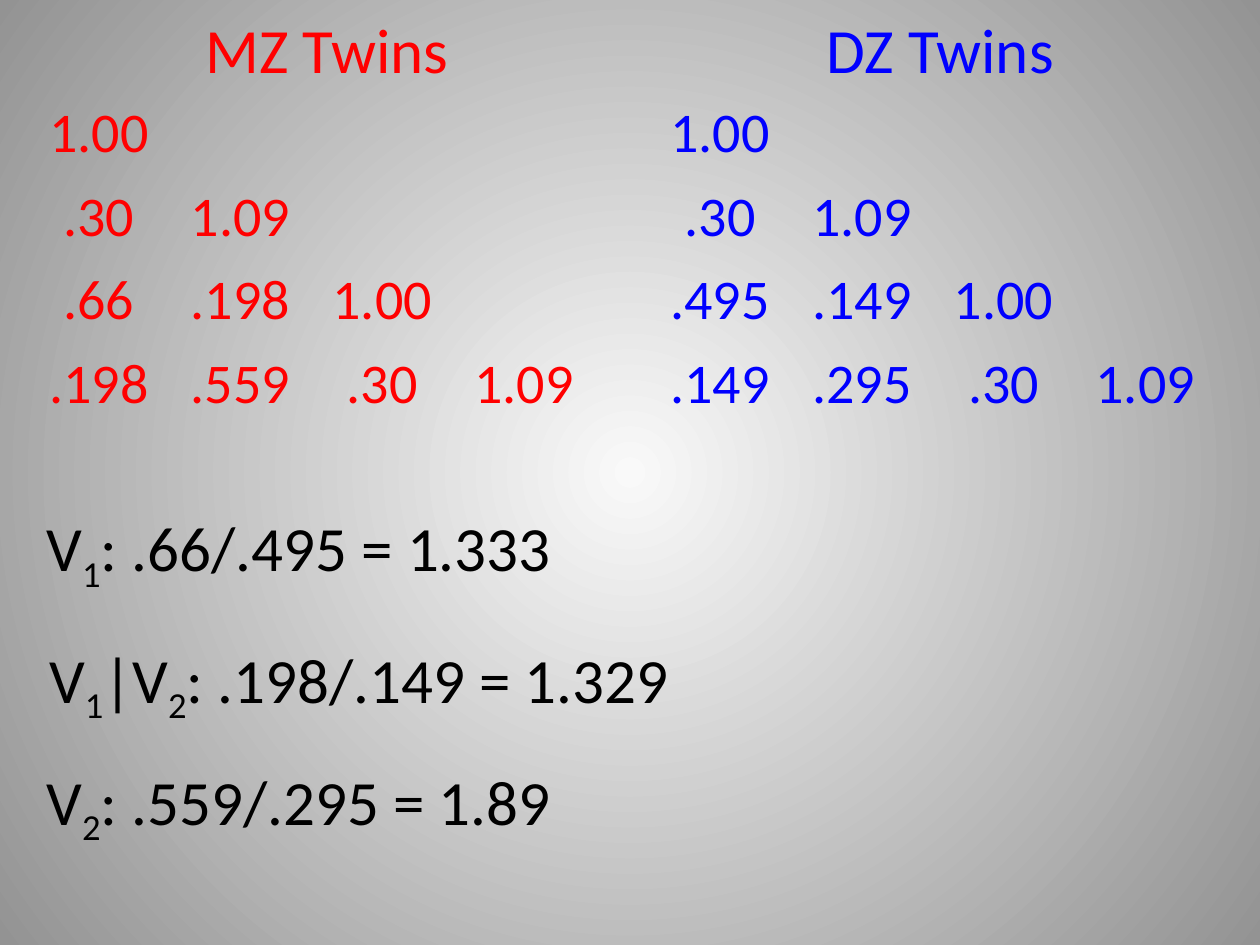
from dataclasses import dataclass

from lxml import etree
from pptx import Presentation
from pptx.dml.color import RGBColor
from pptx.enum.dml import MSO_THEME_COLOR
from pptx.enum.text import MSO_AUTO_SIZE, PP_ALIGN
from pptx.oxml.ns import qn
from pptx.util import Pt

CENTER = PP_ALIGN.CENTER
GROW = MSO_AUTO_SIZE.SHAPE_TO_FIT_TEXT
ACCENT = MSO_THEME_COLOR.ACCENT_1
NO_STYLE_NO_GRID = "{2D5ABB26-0587-4C30-8999-92F81FD0307C}"
BLANK_LAYOUT = 6


@dataclass(frozen=True)
class Theme:
    font: str = "Calibri"
    mz: RGBColor = RGBColor(0xFF, 0x00, 0x00)
    dz: RGBColor = RGBColor(0x00, 0x00, 0xFF)
    ink: RGBColor = RGBColor(0x00, 0x00, 0x00)
    glow: RGBColor = RGBColor(0xF9, 0xF9, 0xF9)
    edge: RGBColor = RGBColor(0x93, 0x93, 0x93)
    heading: int = 36
    matrix: int = 32


THEME = Theme()

# Lower triangles of the covariance matrices
MZ_ROWS = [["1.00"], [".30", "1.09"], [".66", ".198", "1.00"],
           [".198", ".559", ".30", "1.09"]]
DZ_ROWS = [["1.00"], [".30", "1.09"], [".495", ".149", "1.00"],
           [".149", ".295", ".30", "1.09"]]

# Ratio lines: left, top, width, then text pieces that alternate normal, subscript
RATIOS = [
    (19.5, 287.3, 307.5, ["V", "1", ": .66/.495 = 1.333"]),
    (21, 362.2, 375, ["V", "1", "|V", "2", ": .198/.149 = 1.329"]),
    (19.5, 432, 307.5, ["V", "2", ": .559/.295 = 1.89"]),
]


def add_run(paragraph, text, size, color):
    run = paragraph.add_run()
    run.text = text
    for attribute, value in {"name": THEME.font, "size": Pt(size)}.items():
        setattr(run.font, attribute, value)
    run.font.color.rgb = color
    return run


def add_line(slide, left, top, width, pieces, color):
    """One line of large text; every second piece is a subscript."""
    box = slide.shapes.add_textbox(Pt(left), Pt(top), Pt(width), Pt(51))
    frame = box.text_frame
    for attribute, value in {"word_wrap": False, "auto_size": GROW}.items():
        setattr(frame, attribute, value)
    for index, piece in enumerate(pieces):
        run = add_run(frame.paragraphs[0], piece, THEME.heading, color)
        if index % 2:
            run.font._element.set("baseline", "-25000")


def paint_background(slide):
    """Radial gradient, light in the middle and grey at the edges."""
    fill = slide.background.fill
    fill.gradient()
    for stop, color, position in zip(fill.gradient_stops,
                                     (THEME.glow, THEME.edge), (0, 1)):
        stop.color.theme_color = ACCENT  # drops the preset tints
        stop.color.rgb = color
        stop.position = position
    gradient = slide.background._cSld.find(".//" + qn("a:gradFill"))
    linear = gradient.find(qn("a:lin"))
    circle = etree.Element(qn("a:path"), {"path": "circle"})
    etree.SubElement(circle, qn("a:fillToRect"),
                     dict.fromkeys("ltrb", "50000"))
    gradient.replace(linear, circle)


def add_twin_panel(slide, left, top, width, height, title, title_width, rows, color):
    """Heading above a triangular matrix."""
    heading_height = 51
    add_line(slide, left + 94.3, top, title_width, [title], color)

    count = len(rows)
    matrix_height = height - heading_height
    matrix = slide.shapes.add_table(count, count, Pt(left), Pt(top + heading_height),
                                    Pt(width), Pt(matrix_height)).table
    for attribute in ("first_row", "horz_banding"):
        setattr(matrix, attribute, False)
    matrix._tbl.tblPr.find(qn("a:tableStyleId")).text = NO_STYLE_NO_GRID
    for column in matrix.columns:
        column.width = Pt(width / count)
    for row in matrix.rows:
        row.height = Pt(matrix_height / count)
    for cell in matrix.iter_cells():
        cell.fill.background()

    for row_index, values in enumerate(rows):
        for column_index, value in enumerate(values):
            paragraph = matrix.cell(row_index, column_index).text_frame.paragraphs[0]
            paragraph.alignment = CENTER
            add_run(paragraph, value, THEME.matrix, color)


def add_ratios(slide):
    """MZ to DZ ratios under the matrices."""
    for left, top, width, pieces in RATIOS:
        add_line(slide, left, top, width, pieces, THEME.ink)


def main():
    deck = Presentation()
    deck.slide_width, deck.slide_height = Pt(720), Pt(540)
    slide = deck.slides.add_slide(deck.slide_layouts[BLANK_LAYOUT])
    paint_background(slide)
    add_twin_panel(slide, 16, 2.2, 324, 242, "MZ Twins", 156, MZ_ROWS, THEME.mz)
    add_twin_panel(slide, 371, 2.2, 324, 242, "DZ Twins", 148, DZ_ROWS, THEME.dz)
    add_ratios(slide)
    deck.save("out.pptx")


if __name__ == "__main__":
    main()
